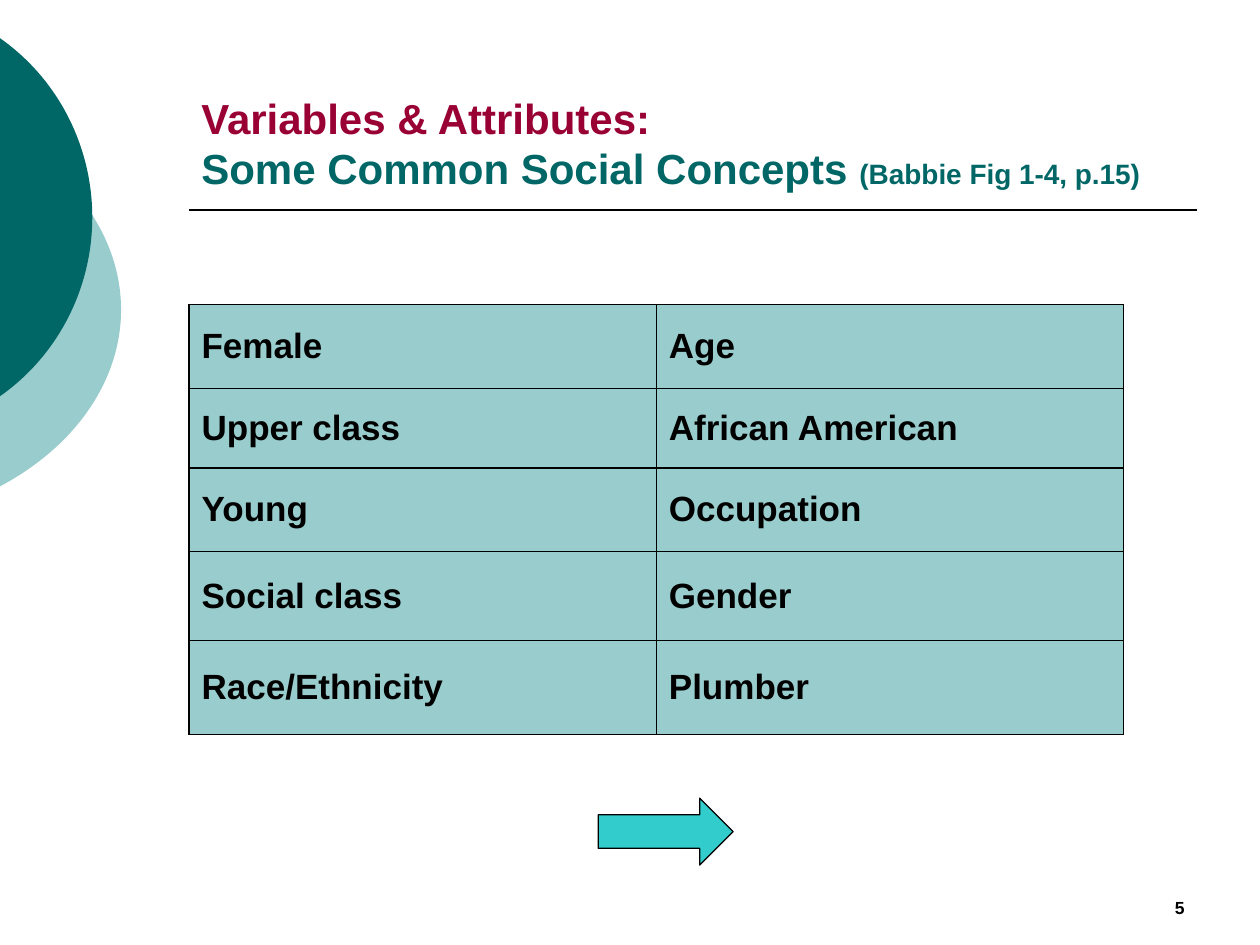
from math import acos, cos, sin, tan
from lxml import etree
from pptx import Presentation
from pptx.dml.color import RGBColor
from pptx.enum.shapes import MSO_CONNECTOR, MSO_SHAPE
from pptx.enum.text import MSO_ANCHOR, PP_ALIGN
from pptx.oxml import parse_xml
from pptx.oxml.ns import nsdecls, qn
from pptx.util import Cm, Pt

LINE = MSO_CONNECTOR.STRAIGHT
ARROW = MSO_SHAPE.RIGHT_ARROW
MID, LOW = MSO_ANCHOR.MIDDLE, MSO_ANCHOR.BOTTOM
LEFT, RIGHT = PP_ALIGN.LEFT, PP_ALIGN.RIGHT

HUES = {"ink": "000000", "wine": "990033", "teal": "006666",
        "pale": "99CCCC", "aqua": "33CCCC"}
TITLE = [[("Variables & Attributes:", 24, "wine")],
         [("Some Common Social Concepts ", 24, "teal"),
          ("(Babbie Fig 1-4, p.15)", 16, "teal")]]
NUMBER = [[("5", 10, "ink")]]
TERMS = [("Female", "Age"), ("Upper class", "African American"),
         ("Young", "Occupation"), ("Social class", "Gender"),
         ("Race/Ethnicity", "Plumber")]
HEIGHTS = [1.69, 1.6, 1.69, 1.79, 1.9]
EDGE, WIDTH = 3.81, 18.84
DISCS = [(-8.99, 1.9, 11.43, 8.69, "pale"), (-6.73, 0, 8.59, 8.76, "teal")]


def hue(name):
    return RGBColor.from_string(HUES[name])


def paint(fill, name):
    fill.solid()
    fill.fore_color.rgb = hue(name)


def stroke(line, size):
    paint(line.fill, "ink")
    line.width = Pt(size)


def write(para, text, size, name):
    run = para.add_run()
    run.text = text
    look = {"name": "Arial", "size": Pt(size), "bold": True}
    for key, value in look.items():
        setattr(run.font, key, value)
    run.font.color.rgb = hue(name)


def label(slide, place, lines, align):
    frame = slide.shapes.add_textbox(*map(Cm, place)).text_frame
    look = {"word_wrap": True, "vertical_anchor": LOW}
    for key, value in look.items():
        setattr(frame, key, value)
    para = frame.paragraphs[0]
    para.alignment = align
    for i, line in enumerate(lines):
        if i:
            para.add_line_break()
        for part in line:
            write(para, *part)


def curve(wide, high, end):
    pull = 4 / 3 * tan(end / 4)

    def spot(turn, lean):
        x = cos(turn) - lean * sin(turn)
        y = sin(turn) + lean * cos(turn)
        return Cm(wide / 2 * (1 + x)), Cm(high / 2 * (1 + y))

    steps = [("moveTo", [spot(-end, 0)])]
    for a, b in ((-end, 0), (0, end)):
        steps.append(("cubicBezTo",
                      [spot(a, pull), spot(b, -pull), spot(b, 0)]))
    return steps + [("close", [])]


def disc(slide, left, top, wide, high, name):
    x, y, w, h = map(Cm, (left, top, wide, high))
    draft = slide.shapes.build_freeform(x, y)
    draft.add_line_segments([(x + w, y), (x + w, y + h)], close=True)
    shape = draft.convert_to_shape()
    shape.shadow.inherit = False
    paint(shape.fill, name)
    shape.line.fill.background()
    path = next(shape._element.iter(qn("a:path")))
    for node in list(path):
        path.remove(node)
    end = acos(-2 * left / wide - 1)
    for tag, points in curve(wide, high, end):
        step = etree.SubElement(path, qn("a:" + tag))
        for a, b in points:
            etree.SubElement(step, qn("a:pt"), x=str(int(a)), y=str(int(b)))


def border(cell):
    props = cell._tc.get_or_add_tcPr()
    for side in "LRTB":
        props.append(parse_xml(
            f'<a:ln{side} {nsdecls("a")} w="{Pt(1)}"><a:solidFill>'
            f'<a:srgbClr val="{HUES["ink"]}"/></a:solidFill></a:ln{side}>'))


def grid(slide):
    size = len(TERMS), len(TERMS[0])
    place = EDGE, 6.14, WIDTH, sum(HEIGHTS)
    table = slide.shapes.add_table(*size, *map(Cm, place)).table
    for key in ("first_row", "horz_banding"):
        setattr(table, key, False)
    for row, high, words in zip(table.rows, HEIGHTS, TERMS):
        row.height = Cm(high)
        for cell, word in zip(row.cells, words):
            border(cell)
            paint(cell.fill, "pale")
            cell.vertical_anchor = MID
            write(cell.text_frame.paragraphs[0], word, 20, "ink")


def main():
    deck = Presentation()
    deck.slide_width, deck.slide_height = Cm(25.4), Cm(19.05)
    slide = deck.slides.add_slide(deck.slide_layouts[6])
    for item in DISCS:
        disc(slide, *item)

    ends = EDGE, 4.24, 24.13, 4.24
    rule = slide.shapes.add_connector(LINE, *map(Cm, ends))
    stroke(rule.line, 1)
    etree.SubElement(rule._element.spPr, qn("a:effectLst"))

    label(slide, (18.21, 17.36, 5.92, 1.27), NUMBER, RIGHT)
    label(slide, (EDGE, 0.84, 20.32, 3.18), TITLE, LEFT)
    grid(slide)

    arrow = slide.shapes.add_shape(ARROW, *map(Cm, (12.06, 16.09, 2.72, 1.35)))
    arrow.shadow.inherit = False
    paint(arrow.fill, "aqua")
    stroke(arrow.line, 0.75)
    deck.save("out.pptx")


if __name__ == "__main__":
    main()
